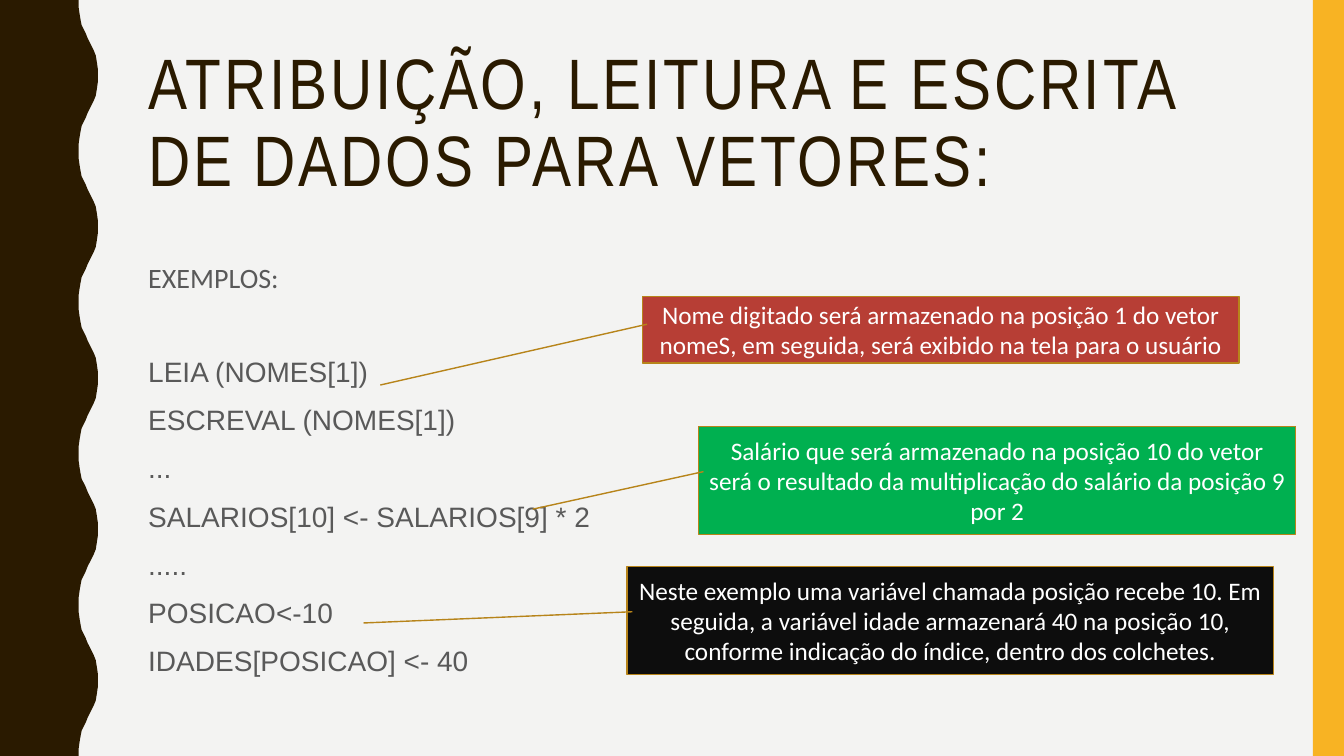
import pptx
import pptx.dml.color
import pptx.enum.shapes
import pptx.enum.text
import pptx.util
from lxml import etree

Inches = pptx.util.Inches
Pt = pptx.util.Pt
RGBColor = pptx.dml.color.RGBColor
Anchor = pptx.enum.text.MSO_ANCHOR
Align = pptx.enum.text.PP_ALIGN
Shape = pptx.enum.shapes.MSO_SHAPE

BACKGROUND = RGBColor(0xF3, 0xF3, 0xF2)
BROWN = RGBColor(0x2A, 0x1A, 0x00)
YELLOW = RGBColor(0xF8, 0xB3, 0x23)
GOLD = RGBColor(0xB7, 0x84, 0x1A)
GREY = RGBColor(0x59, 0x59, 0x59)
WHITE = RGBColor(0xFF, 0xFF, 0xFF)
RED = RGBColor(0xB7, 0x3E, 0x35)
GREEN = RGBColor(0x00, 0xB0, 0x50)
BLACK = RGBColor(0x0D, 0x0D, 0x0D)


def add_run(paragraph, text, font_name, size, color):
    run = paragraph.add_run()
    run.text = text
    run.font.name = font_name
    run.font.size = Pt(size)
    run.font.color.rgb = color
    return run


def place(shape, left, top, width, height):
    shape.left, shape.top = Inches(left), Inches(top)
    shape.width, shape.height = Inches(width), Inches(height)


presentation = pptx.Presentation()
presentation.slide_width = Inches(13.33)
presentation.slide_height = Inches(7.5)
slide = presentation.slides.add_slide(presentation.slide_layouts[1])
slide.background.fill.solid()
slide.background.fill.fore_color.rgb = BACKGROUND

# Wavy left band: each wave swells over half a period and mirrors back
WAVE_PERIOD = 1.5
SWELL = [(0.78, 0), (0.78, 0.07), (0.79, 0.14), (0.8, 0.2), (0.81, 0.25),
         (0.83, 0.29), (0.85, 0.33), (0.87, 0.38), (0.89, 0.42), (0.91, 0.46),
         (0.93, 0.5), (0.95, 0.55), (0.96, 0.61), (0.97, 0.68), (0.97, 0.75)]
wave = SWELL + [(x, WAVE_PERIOD - y) for x, y in reversed(SWELL[:-1])]
edge = [(x, y + WAVE_PERIOD * index) for index in range(5) for x, y in wave]
builder = slide.shapes.build_freeform(0, 0)
builder.add_line_segments([(Inches(x), Inches(y)) for x, y in edge + [(0, 7.5)]])
wavy_band = builder.convert_to_shape()
yellow_band = slide.shapes.add_shape(
    Shape.RECTANGLE, Inches(13.02), 0, Inches(0.31), Inches(7.5))
for band, color in ((wavy_band, BROWN), (yellow_band, YELLOW)):
    band.shadow.inherit = False
    band.fill.solid()
    band.fill.fore_color.rgb = color
    band.line.fill.background()

title = slide.shapes.title
place(title, 1.37, 0.42, 11.13, 1.63)
title.text_frame.word_wrap = True
title.text_frame.auto_size = pptx.enum.text.MSO_AUTO_SIZE.NONE
title.text_frame.vertical_anchor = Anchor.MIDDLE
paragraph = title.text_frame.paragraphs[0]
paragraph.alignment = Align.LEFT
paragraph.line_spacing = 0.9
run = add_run(paragraph, "ATRIBUIÇÃO, LEITURA E ESCRITA DE DADOS PARA VETORES:",
              "Arial Narrow", 51, BROWN)
run.font._element.set("spc", "200")

# Text, font and space before of each line
EXAMPLES = [
    ("EXEMPLOS:", "Calibri", 7),
    ("LEIA (NOMES[1])", "Arial", 41),
    ("ESCREVAL (NOMES[1])", "Arial", 8),
    ("...", "Arial", 8),
    ("SALARIOS[10] <- SALARIOS[9] * 2", "Arial", 8),
    (".....", "Arial", 8),
    ("POSICAO<-10", "Arial", 8),
    ("IDADES[POSICAO] <- 40", "Arial", 8),
]
body = slide.placeholders[1]
place(body, 1.37, 2.5, 4.86, 4.79)
body.text_frame.word_wrap = True
body.text_frame.auto_size = pptx.enum.text.MSO_AUTO_SIZE.NONE
body.text_frame.vertical_anchor = Anchor.TOP
for index, (text, font_name, space_before) in enumerate(EXAMPLES):
    paragraph = (body.text_frame.add_paragraph() if index
                 else body.text_frame.paragraphs[0])
    paragraph.line_spacing = 1.1
    paragraph.space_before = Pt(space_before)
    properties = paragraph._p.get_or_add_pPr()
    properties.set("marL", "0")
    properties.set("indent", "0")
    etree.SubElement(properties, pptx.oxml.ns.qn("a:buNone"))
    add_run(paragraph, text, font_name, 20, GREY)

# Box, fill, end of the pointer (y, x as shares of the box) and text
CALLOUTS = [
    ((6.37, 2.94, 5.92, 0.66), RED, (1.334, -0.439),
     "Nome digitado será armazenado na posição 1 do vetor nomeS, "
     "em seguida, será exibido na tela para o usuário"),
    ((6.93, 4.23, 5.92, 1.07), GREEN, (0.768, -0.278),
     "Salário que será armazenado na posição 10 do vetor será o resultado "
     "da multiplicação do salário da posição 9 por 2"),
    ((6.22, 5.62, 6.41, 1.07), BLACK, (0.524, -0.408),
     "Neste exemplo uma variável chamada posição recebe 10. Em seguida, "
     "a variável idade armazenará 40 na posição 10, conforme indicação "
     "do índice, dentro dos colchetes."),
]
for box, color, pointer_end, text in CALLOUTS:
    callout = slide.shapes.add_shape(Shape.LINE_CALLOUT_1, *map(Inches, box))
    for index, value in enumerate((0.42, 0.008) + pointer_end):
        callout.adjustments[index] = value
    callout.shadow.inherit = False
    callout.fill.solid()
    callout.fill.fore_color.rgb = color
    callout.line.color.rgb = GOLD
    callout.line.width = Pt(1)
    callout.text_frame.word_wrap = True
    callout.text_frame.vertical_anchor = Anchor.MIDDLE
    paragraph = callout.text_frame.paragraphs[0]
    paragraph.alignment = Align.CENTER
    add_run(paragraph, text, "Calibri", 18, WHITE)

presentation.save("out.pptx")
